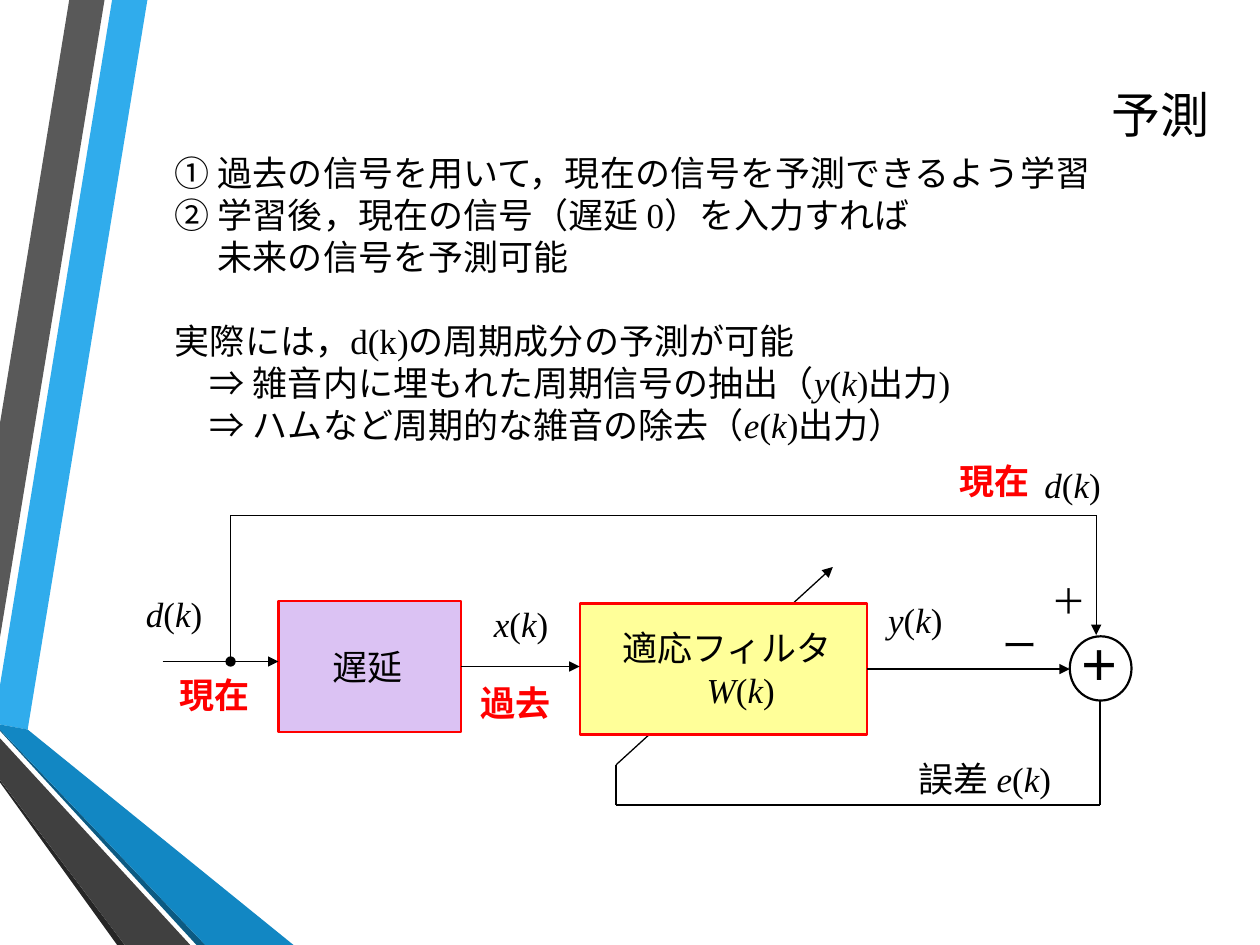
from lxml.etree import SubElement
from pptx import Presentation
from pptx.dml.color import RGBColor
from pptx.enum.shapes import MSO_CONNECTOR, MSO_SHAPE
from pptx.enum.text import MSO_ANCHOR, MSO_AUTO_SIZE, PP_ALIGN
from pptx.oxml.ns import qn
from pptx.util import Inches, Pt

BLACK, WHITE, RED = "000000", "FFFFFF", "FF0000"
LEFT, CENTER, RIGHT = PP_ALIGN.LEFT, PP_ALIGN.CENTER, PP_ALIGN.RIGHT

RIBBONS = [
    ("30ACEC", [(0, 5.44), (0, 5.75), (0.22, 5.79), (1.17, 0), (0.89, 0)]),
    ("595959", [(0.83, 0), (0.55, 0), (0, 3.36), (0, 5.06)]),
    ("262626", [(0, 6.19), (0, 6.21), (0.93, 7.5), (0.99, 7.5)]),
    ("0C5A82", [(0, 5.79), (0, 5.8), (1.56, 7.5), (1.63, 7.5)]),
    ("1287C3", [(0, 5.79), (1.63, 7.5), (2.33, 7.5), (0.22, 5.79), (0, 5.75)]),
    ("404040", [(0, 6.19), (0.99, 7.5), (1.51, 7.5), (0, 5.86)]),
]

EXPLANATION = [
    "① 過去の信号を用いて，現在の信号を予測できるよう学習",
    "② 学習後，現在の信号（遅延 0）を入力すれば",
    "　 未来の信号を予測可能",
    "実際には，d(k)の周期成分の予測が可能",
    "　⇒ 雑音内に埋もれた周期信号の抽出（*y*(*k*)出力)",
    "　⇒ ハムなど周期的な雑音の除去（*e*(*k*)出力）",
]

# text, left, top, width, alignment
SIGNAL_LABELS = [
    ("*d*(*k*)", 8.19, 3.63, 0.88, LEFT),
    ("*d*(*k*)", 1.06, 4.65, 0.88, LEFT),
    ("*x*(*k*)", 3.15, 4.73, 1.3, RIGHT),
    ("*y*(*k*)", 6.95, 4.7, 0.82, LEFT),
    (" ー", 7.59, 4.9, 0.74, RIGHT),
    (" ＋", 7.98, 4.55, 0.74, RIGHT),
    (" 誤差 *e*(*k*)", 7.13, 5.96, 1.5, LEFT),
    (" 遅延", 2.41, 5.07, 0.96, CENTER),
]
TIME_LABELS = [(" 現在", 1.26, 5.3), (" 過去", 3.65, 5.36), (" 現在", 7.45, 3.6)]


def color(value):
    return RGBColor.from_string(value)


def write(paragraph, text, size=20, font="Times New Roman", fill=BLACK,
          bold=False, align=LEFT):
    """Fill a paragraph; parts between asterisks become italic."""
    paragraph.alignment = align
    for index, part in enumerate(text.split("*")):
        if not part:
            continue
        span = paragraph.add_run()
        span.text = part
        span.font.name = font
        span.font.size = Pt(size)
        span.font.bold = bold
        span.font.italic = index % 2 == 1
        span.font.color.rgb = color(fill)


def add_text(page, lines, left, top, width, height=0.44, **style):
    box = page.shapes.add_textbox(
        Inches(left), Inches(top), Inches(width), Inches(height))
    frame = box.text_frame
    frame.word_wrap = True
    frame.auto_size = MSO_AUTO_SIZE.SHAPE_TO_FIT_TEXT
    for index, line in enumerate(lines):
        paragraph = frame.add_paragraph() if index else frame.paragraphs[0]
        write(paragraph, line, **style)
    return box


def add_block(page, kind, left, top, width, height, fill, line):
    block = page.shapes.add_shape(
        kind, Inches(left), Inches(top), Inches(width), Inches(height))
    block.shadow.inherit = False
    block.fill.solid()
    block.fill.fore_color.rgb = color(fill)
    block.line.color.rgb = color(line)
    block.line.width = Pt(1.25)
    return block


def add_wire(page, start, end, head=None, tail=None):
    """Draw a signal line; head and tail name the marks at start and end."""
    wire = page.shapes.add_connector(
        MSO_CONNECTOR.STRAIGHT, *(Inches(value) for value in start + end))
    wire.line.color.rgb = color(BLACK)
    wire.line.width = Pt(0.75)
    outline = wire.line._get_or_add_ln()
    for tag, mark in (("a:headEnd", head), ("a:tailEnd", tail)):
        if mark:
            SubElement(outline, qn(tag), type=mark)
    SubElement(wire._element.spPr, qn("a:effectLst"))
    return wire


def add_ribbon(page, fill, points):
    corners = [(Inches(x), Inches(y)) for x, y in points]
    builder = page.shapes.build_freeform(*corners[0])
    builder.add_line_segments(corners[1:], close=True)
    ribbon = builder.convert_to_shape()
    ribbon.shadow.inherit = False
    ribbon.fill.solid()
    ribbon.fill.fore_color.rgb = color(fill)
    ribbon.line.fill.background()


def set_title(page, text):
    title = page.shapes.title
    title.left, title.top = Inches(1.27), Inches(0.18)
    title.width, title.height = Inches(8.43), Inches(1.45)
    title.text_frame.vertical_anchor = MSO_ANCHOR.MIDDLE
    write(title.text_frame.paragraphs[0], text, size=28, font="Calibri", align=RIGHT)


def add_adder(page):
    adder = add_block(page, MSO_SHAPE.OVAL, 8.49, 5.05, 0.49, 0.51, WHITE, BLACK)
    frame = adder.text_frame
    frame.margin_left = frame.margin_right = frame.margin_bottom = 0
    frame.margin_top = Inches(0.12)
    frame.vertical_anchor = MSO_ANCHOR.MIDDLE
    paragraph = frame.paragraphs[0]
    paragraph.line_spacing = Pt(16)
    write(paragraph, "＋", size=24, font="Calibri", bold=True, align=PP_ALIGN.JUSTIFY)


def add_diagram(page):
    # The adaptation arrow passes behind the filter block.
    add_wire(page, (4.89, 6.07), (6.61, 4.5), tail="triangle")
    adaptive = add_block(page, MSO_SHAPE.RECTANGLE, 4.6, 4.79, 2.28, 1.04, "FFFF99", RED)
    delay = add_block(page, MSO_SHAPE.RECTANGLE, 2.21, 4.77, 1.45, 1.04, "DBC2F3", RED)
    add_adder(page)

    add_wire(page, (1.29, 5.25), (2.21, 5.25), tail="triangle")
    delayed = add_wire(page, (3.66, 5.29), (4.6, 5.29), tail="triangle")
    delayed.begin_connect(delay, 3)
    output = add_wire(page, (6.88, 5.31), (8.49, 5.31), tail="triangle")
    output.begin_connect(adaptive, 3)

    add_wire(page, (1.83, 5.25), (1.83, 4.09), head="oval")
    add_wire(page, (1.83, 4.09), (8.7, 4.09))
    add_wire(page, (8.7, 4.09), (8.7, 5.04), tail="triangle")

    feedback = [(8.73, 5.56), (8.73, 6.39), (4.89, 6.39), (4.89, 6.07)]
    for start, end in zip(feedback, feedback[1:]):
        add_wire(page, start, end)

    add_text(page, [" 適応フィルタ", "　*W*(*k*)"], 4.75, 4.92, 1.98, 0.77, align=CENTER)
    for text, left, top, width, align in SIGNAL_LABELS:
        add_text(page, [text], left, top, width, align=align)
    for text, left, top in TIME_LABELS:
        add_text(page, [text], left, top, 1.03, fill=RED, bold=True)


def main():
    deck = Presentation()
    deck.slide_width, deck.slide_height = Inches(10), Inches(7.5)
    page = deck.slides.add_slide(deck.slide_layouts[5])
    for fill, points in RIBBONS:
        add_ribbon(page, fill, points)
    set_title(page, "予測")
    explanation = add_text(page, EXPLANATION, 1.29, 1.15, 8.41, 2.79)
    explanation.text_frame.paragraphs[3].space_before = Pt(24)
    add_diagram(page)
    deck.save("out.pptx")


if __name__ == "__main__":
    main()
